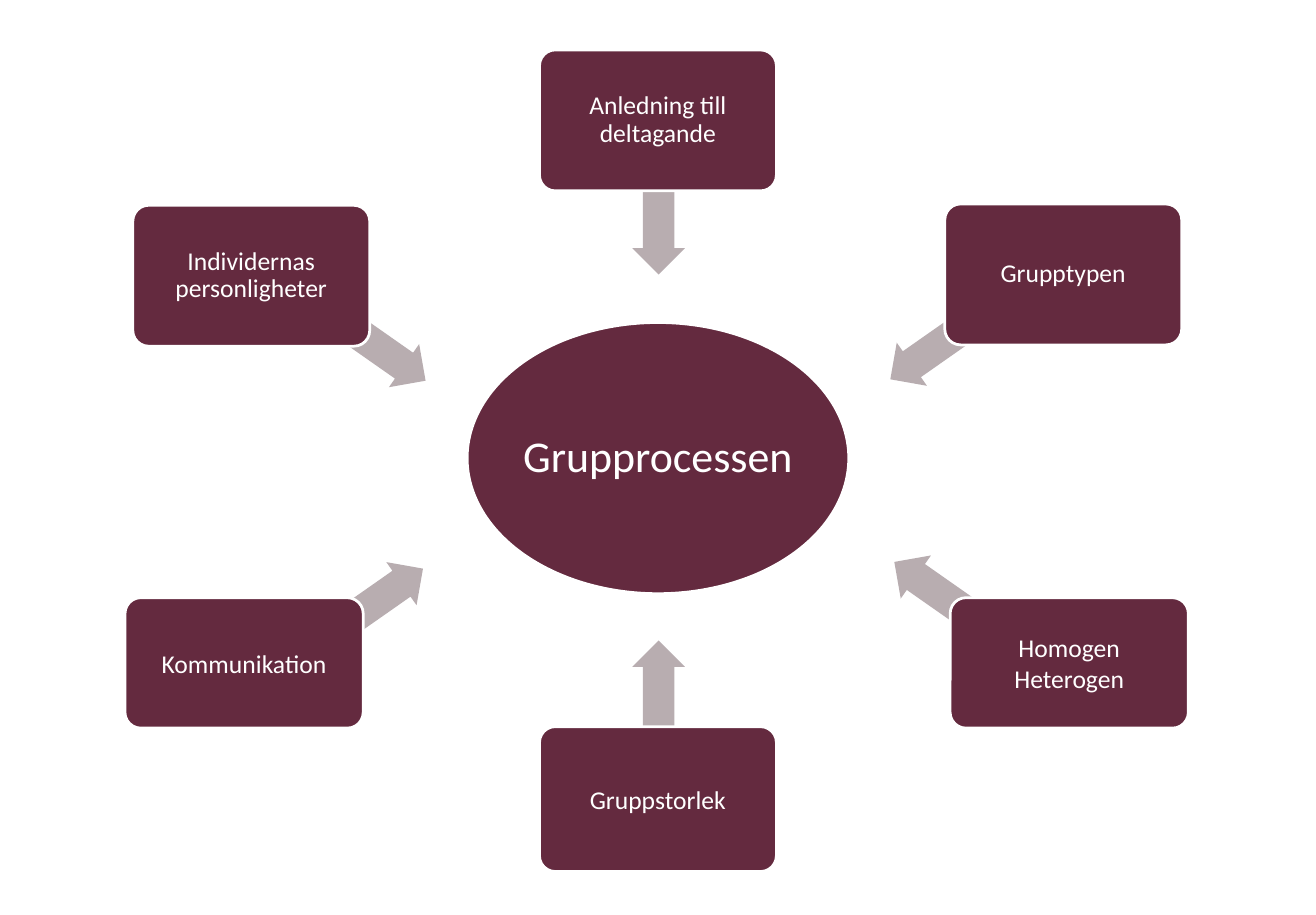
from dataclasses import dataclass

from pptx import Presentation
from pptx.dml.color import RGBColor
from pptx.enum.shapes import MSO_SHAPE
from pptx.enum.text import MSO_ANCHOR, PP_ALIGN
from pptx.util import Inches, Pt

ELLIPSE = MSO_SHAPE.OVAL
ROUNDED = MSO_SHAPE.ROUNDED_RECTANGLE
LEFT_ARROW = MSO_SHAPE.LEFT_ARROW
MIDDLE = MSO_ANCHOR.MIDDLE
CENTER = PP_ALIGN.CENTER

COLORS = {"plum": "642A3F", "arrow": "B8ADB0", "white": "FFFFFF"}
FONT = "Calibri"
ARROW_HEIGHT = 0.4
CORNER_RADIUS = 0.12


@dataclass(frozen=True)
class Area:
    left: float
    top: float
    width: float
    height: float


@dataclass(frozen=True)
class Factor:
    """A box around the group process and the arrow leading inwards from it."""
    label: str
    box: Area
    arrow_left: float
    arrow_top: float
    arrow_length: float
    angle: float
    line_spacing: float = 0.9


FACTORS = (
    Factor("Individernas personligheter", Area(1.01, 1.56, 1.8, 1.07), 1.77, 2.23, 1.61, 215),
    Factor("Anledning till deltagande", Area(4.1, 0.38, 1.8, 1.07), 4.39, 1.27, 1.23, 270),
    Factor("Grupptypen", Area(7.18, 1.55, 1.8, 1.07), 6.62, 2.22, 1.61, 325),
    Factor("Kommunikation", Area(0.95, 4.54, 1.81, 0.99), 1.75, 4.58, 1.61, 145, 1.0),
    Factor("Gruppstorlek", Area(4.1, 5.52, 1.8, 1.1), 4.39, 5.28, 1.23, 90, 1.0),
    Factor("Homogen Heterogen", Area(7.22, 4.54, 1.81, 0.99), 6.65, 4.53, 1.61, 35, 1.0),
)


def color(name: str) -> RGBColor:
    return RGBColor.from_string(COLORS[name])


def add_filled_shape(slide, kind, area: Area, fill: str, outline: str | None = None):
    shape = slide.shapes.add_shape(
        kind, Inches(area.left), Inches(area.top), Inches(area.width), Inches(area.height))
    shape.shadow.inherit = False
    shape.fill.solid()
    shape.fill.fore_color.rgb = color(fill)
    if outline:
        shape.line.color.rgb = color(outline)
        shape.line.width = Pt(1.5)
    else:
        shape.line.fill.background()
    return shape


def write_text(shape, text: str, *, size: float, inset: float, line_spacing: float = 0.9) -> None:
    frame = shape.text_frame
    frame.word_wrap = True
    frame.vertical_anchor = MIDDLE
    frame.margin_left = frame.margin_right = Inches(inset)
    frame.margin_top = frame.margin_bottom = Inches(inset)
    para = frame.paragraphs[0]
    para.alignment = CENTER
    para.line_spacing = line_spacing
    span = para.add_run()
    span.text = text
    span.font.name = FONT
    span.font.size = Pt(size)
    span.font.color.rgb = color("white")


def add_factor(slide, factor: Factor) -> None:
    arrow_area = Area(factor.arrow_left, factor.arrow_top, factor.arrow_length, ARROW_HEIGHT)
    arrow = add_filled_shape(slide, LEFT_ARROW, arrow_area, "arrow")
    arrow.adjustments[0] = 0.6
    arrow.adjustments[1] = 0.5
    arrow.rotation = factor.angle

    box = add_filled_shape(slide, ROUNDED, factor.box, "plum", "white")
    box.adjustments[0] = CORNER_RADIUS / factor.box.height
    write_text(box, factor.label, size=14, inset=0.15, line_spacing=factor.line_spacing)


def main() -> None:
    deck = Presentation()
    deck.slide_width = Inches(10)
    deck.slide_height = Inches(6.95)
    blank_layout = deck.slide_layouts[6]
    slide = deck.slides.add_slide(blank_layout)

    process = add_filled_shape(slide, ELLIPSE, Area(3.55, 2.45, 2.9, 2.06), "plum", "white")
    write_text(process, "Grupprocessen", size=24, inset=0)
    for factor in FACTORS:
        add_factor(slide, factor)

    deck.save("out.pptx")


if __name__ == "__main__":
    main()
